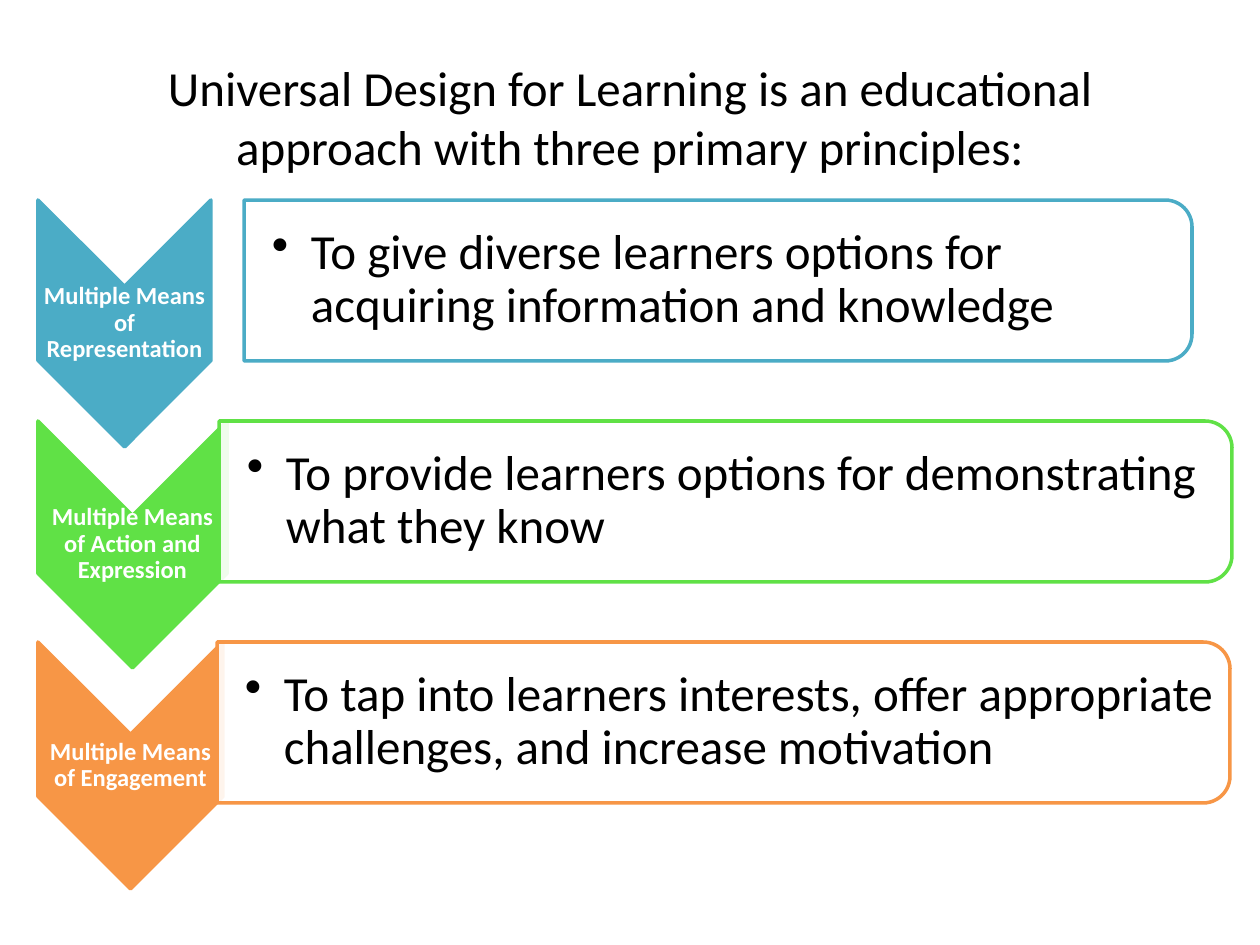
from dataclasses import dataclass

from lxml.etree import SubElement
from pptx import Presentation
from pptx.dml.color import RGBColor
from pptx.enum.shapes import MSO_SHAPE as Shape
from pptx.enum.text import MSO_ANCHOR as Anchor, PP_ALIGN as Align
from pptx.oxml.ns import qn
from pptx.util import Pt

PX = 914400 // 126


@dataclass(frozen=True)
class Theme:
    font: str = "Calibri"
    ink: RGBColor = RGBColor(0, 0, 0)
    paper: RGBColor = RGBColor(255, 255, 255)
    blue: RGBColor = RGBColor(0x4B, 0xAC, 0xC6)
    green: RGBColor = RGBColor(0x60, 0xE1, 0x46)
    orange: RGBColor = RGBColor(0xF7, 0x96, 0x46)
    main_size: Pt = Pt(28)
    label_size: Pt = Pt(14)
    outline: Pt = Pt(2)


theme = Theme()


def add_turned_shape(kind, left, top, width, height, fill, line):
    """Add a shape turned 90° clockwise that covers the given box."""
    shift = (width - height) / 2
    box = (left + shift, top - shift, height, width)
    shape = slide.shapes.add_shape(kind, *(round(value * PX) for value in box))
    shape.rotation = 90
    shape.shadow.inherit = False
    shape.fill.solid()
    shape.fill.fore_color.rgb = fill
    shape.line.color.rgb = line
    shape.line.width = theme.outline
    return shape


def add_text(text, left, top, width, height, inset, size, color):
    """Add a middle-anchored text box and return its paragraph."""
    box = (left, top, width, height)
    frame = slide.shapes.add_textbox(*(round(value * PX) for value in box)).text_frame
    frame.word_wrap = True
    frame.vertical_anchor = Anchor.MIDDLE
    frame.margin_left = inset[0] * PX
    frame.margin_top = frame.margin_right = frame.margin_bottom = inset[1] * PX
    paragraph = frame.paragraphs[0]
    paragraph.text = text
    paragraph.line_spacing = 0.9
    paragraph.font.name = theme.font
    paragraph.font.size = size
    paragraph.font.color.rgb = color
    return paragraph


presentation = Presentation()
presentation.slide_width = 1260 * PX
presentation.slide_height = 945 * PX
slide = presentation.slides.add_slide(presentation.slide_layouts[5])

title = slide.shapes.title
title.left, title.top, title.width, title.height = (
    value * PX for value in (63, 38, 1134, 157))
title.text_frame.text = ("Universal Design for Learning is an educational "
                         "approach with three primary principles:")
title.text_frame.vertical_anchor = Anchor.MIDDLE
heading = title.text_frame.paragraphs[0]
heading.alignment = Align.CENTER
heading.font.name = theme.font
heading.font.size = theme.main_size
heading.font.color.rgb = theme.ink

FIRST_TOP, ROW_PITCH = 200, 221
CHEVRON_LEFT, CHEVRON_HEIGHT = 38, 247
PANEL_HEIGHT, PANEL_INSET = 161, 8
BULLET_INDENT = 39

# label, description, color, chevron width, panel left, panel width
principles = [
    ("Multiple Means of Representation",
     "To give diverse learners options for acquiring information and knowledge",
     theme.blue, 173, 244, 948),
    ("Multiple Means of Action and Expression",
     "To provide learners options for demonstrating what they know",
     theme.green, 189, 219, 1013),
    ("Multiple Means of Engagement",
     "To tap into learners interests, offer appropriate challenges, "
     "and increase motivation",
     theme.orange, 185, 217, 1013),
]

for row, (label, description, color, chevron_width, panel_left,
          panel_width) in enumerate(principles):
    top = FIRST_TOP + row * ROW_PITCH

    add_turned_shape(Shape.CHEVRON, CHEVRON_LEFT, top, chevron_width,
                     CHEVRON_HEIGHT, color, color)
    paragraph = add_text(label, CHEVRON_LEFT, top + chevron_width / 2,
                         chevron_width, CHEVRON_HEIGHT - chevron_width,
                         (1, 1), theme.label_size, theme.paper)
    paragraph.alignment = Align.CENTER
    paragraph.font.bold = True

    panel = add_turned_shape(Shape.ROUND_2_SAME_RECTANGLE, panel_left, top,
                             panel_width, PANEL_HEIGHT, theme.paper, color)
    panel_color = panel.fill._xPr.find(qn("a:solidFill"))[0]
    SubElement(panel_color, qn("a:alpha"), val="90000")
    paragraph = add_text(description, panel_left, top + PANEL_INSET,
                         panel_width - PANEL_INSET,
                         PANEL_HEIGHT - 2 * PANEL_INSET,
                         (28, 2), theme.main_size, theme.ink)
    properties = paragraph._p.get_or_add_pPr()
    properties.set("marL", str(BULLET_INDENT * PX))
    properties.set("indent", str(-BULLET_INDENT * PX))
    bullet = properties.makeelement(qn("a:buChar"), {"char": "•"})
    properties.find(qn("a:lnSpc")).addnext(bullet)

presentation.save("out.pptx")
